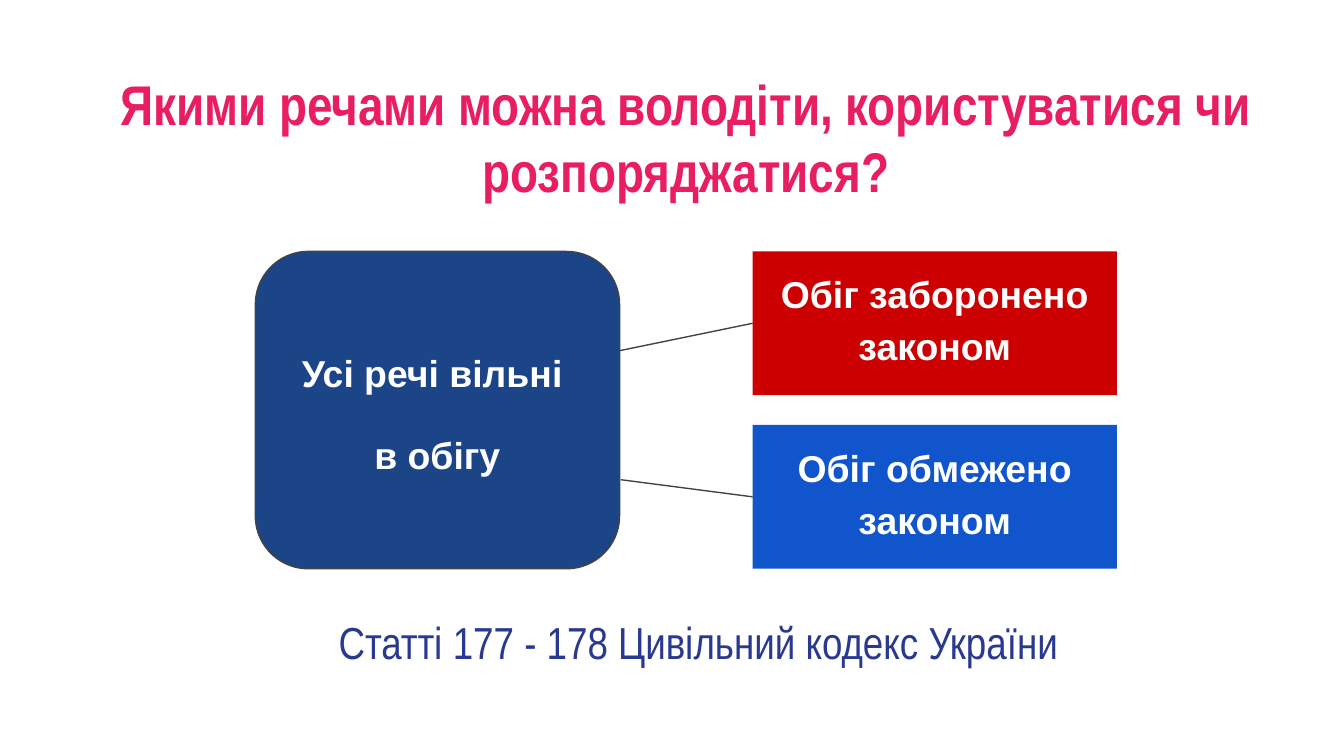
from lxml import etree
from pptx import Presentation
from pptx.dml.color import RGBColor
from pptx.enum.shapes import MSO_CONNECTOR, MSO_SHAPE
from pptx.enum.text import MSO_ANCHOR, MSO_AUTO_SIZE, PP_ALIGN
from pptx.oxml.ns import qn
from pptx.util import Pt

RECT, ROUND = MSO_SHAPE.RECTANGLE, MSO_SHAPE.ROUNDED_RECTANGLE
LINE = MSO_CONNECTOR.STRAIGHT
TOP, MIDDLE = MSO_ANCHOR.TOP, MSO_ANCHOR.MIDDLE
CENTER = PP_ALIGN.CENTER
FIXED = MSO_AUTO_SIZE.NONE
COLORS = {
    "title": "E91D63", "law": "2A3990", "free": "1C4587", "banned": "CC0000",
    "limited": "1155CC", "line": "434343", "white": "FFFFFF",
}


def color(name):
    return RGBColor.from_string(COLORS[name])


def write(shape, lines, face, size, tint, bold, anchor=MIDDLE):
    frame = shape.text_frame
    frame.word_wrap = True
    frame.auto_size = FIXED
    frame.vertical_anchor = anchor
    frame.margin_left = frame.margin_right = Pt(7.2)
    frame.margin_top = frame.margin_bottom = Pt(7.2)
    frame.text = "\n".join(lines)
    for para in frame.paragraphs:
        para.alignment = CENTER
        para.font.name = face
        para.font.size = Pt(size)
        para.font.bold = bold
        para.font.color.rgb = color(tint)
    return frame.paragraphs


deck = Presentation()
deck.slide_width, deck.slide_height = Pt(720), Pt(405)
slide = deck.slides.add_slide(deck.slide_layouts[5])
shapes = slide.shapes

title = shapes.title
title.left, title.top = Pt(29.5), Pt(41.8)
title.width, title.height = Pt(676), Pt(62.6)
write(title, ["Якими речами можна володіти, користуватися чи розпоряджатися?"],
      "Arial Narrow", 30, "title", True)

boxes = [
    (RECT, 403.2, 227.7, 77, "limited", TOP, ["Обіг обмежено законом"]),
    (RECT, 403.2, 134.7, 77, "banned", TOP, ["Обіг заборонено законом"]),
    (ROUND, 136.8, 134.7, 170, "free", MIDDLE, ["Усі речі вільні ", "в обігу"]),
]
for kind, left, top, height, fill, anchor, lines in boxes:
    box = shapes.add_shape(kind, Pt(left), Pt(top), Pt(195.1), Pt(height))
    box.shadow.inherit = False
    box.fill.solid()
    box.fill.fore_color.rgb = color(fill)
    if kind == ROUND:
        box.line.color.rgb = color("line")
        box.line.width = Pt(0.75)
    else:
        box.line.fill.background()
    paras = write(box, lines, "Arial", 20, "white", True, anchor)
    for para in paras:
        para.line_spacing = 1.15
    for para in paras[1:]:
        para.space_before = para.space_after = Pt(16)

for x, start, end in [(331.9, 187.9, 173.2), (332.6, 257, 266.2)]:
    link = shapes.add_connector(LINE, Pt(x), Pt(start), Pt(403.2), Pt(end))
    link.line.color.rgb = color("line")
    link.line.width = Pt(0.75)
    etree.SubElement(link._element.spPr, qn("a:effectLst"))

law = shapes.add_textbox(Pt(74.9), Pt(319.7), Pt(604), Pt(48.2))
write(law, ["Статті 177 - 178 Цивільний кодекс України "],
      "Arial Narrow", 24, "law", False)

deck.save("out.pptx")
